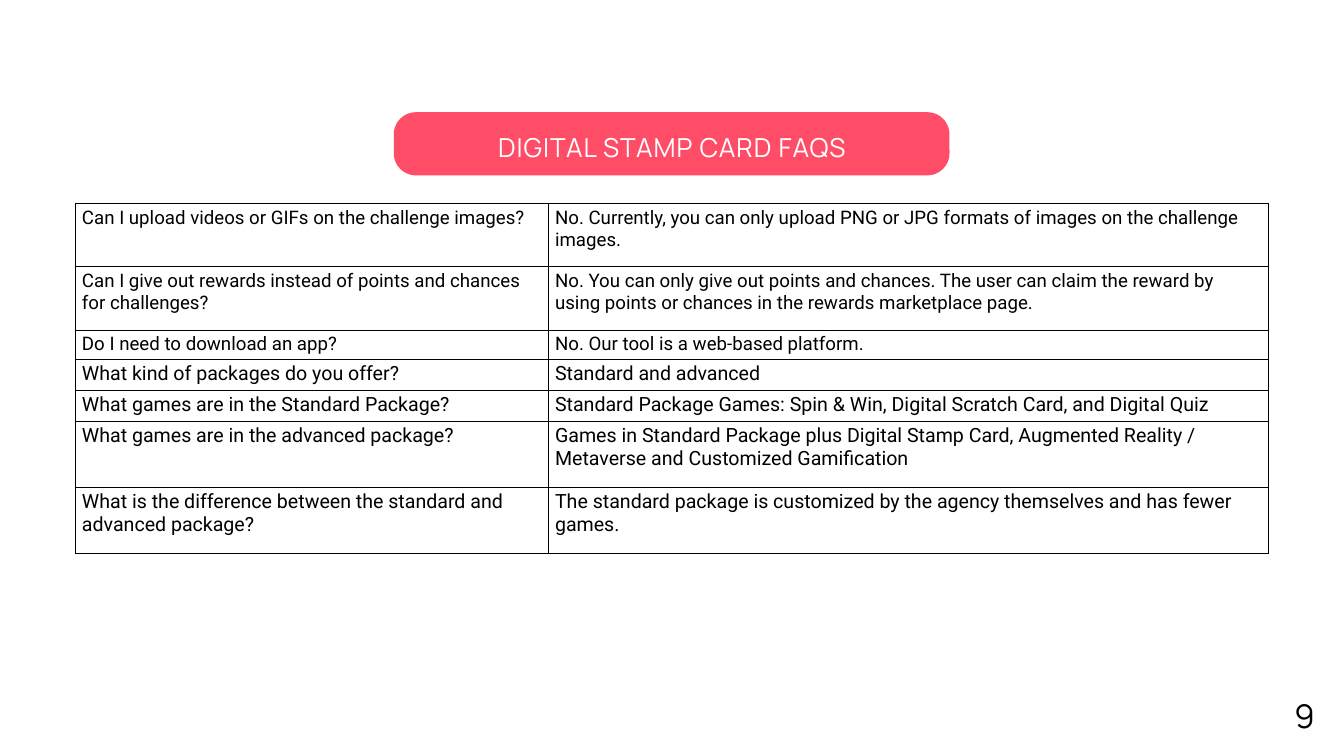
from lxml.etree import SubElement
from pptx import Presentation
from pptx.dml.color import RGBColor
from pptx.enum.shapes import MSO_SHAPE as Shape
from pptx.enum.text import MSO_ANCHOR as Anchor, MSO_AUTO_SIZE as AutoSize, PP_ALIGN as Align
from pptx.oxml.ns import qn
from pptx.util import Inches, Pt

BLACK = RGBColor(0x00, 0x00, 0x00)
WHITE = RGBColor(0xFF, 0xFF, 0xFF)
CORAL = RGBColor(0xFF, 0x4D, 0x67)

COLUMN_WIDTHS = (7.04, 10.72)
FAQS = [
    (0.94, 20, "Can I upload videos or GIFs on the challenge images?",
     "No. Currently, you can only upload PNG or JPG formats of images on the challenge images."),
    (0.94, 20, "Can I give out rewards instead of points and chances for challenges?",
     "No. You can only give out points and chances. The user can claim the reward by using "
     "points or chances in the rewards marketplace page."),
    (0.44, 20, "Do I need to download an app?",
     "No. Our tool is a web-based platform."),
    (0.46, 21, "What kind of packages do you offer?",
     "Standard and advanced"),
    (0.46, 21, "What games are in the Standard Package?",
     "Standard Package Games: Spin & Win, Digital Scratch Card, and Digital Quiz"),
    (0.98, 21, "What games are in the advanced package?",
     "Games in Standard Package plus Digital Stamp Card, Augmented Reality / Metaverse and "
     "Customized Gamification"),
    (0.98, 21, "What is the difference between the standard and advanced package?",
     "The standard package is customized by the agency themselves and has fewer games."),
]


class SlideBuilder:
    heading_font = "Manrope"
    body_font = "Roboto"
    border_width = Pt(0.75)

    def __init__(self, slide):
        self.slide = slide

    def run(self, p, text, font, size, color):
        r = p.add_run()
        r.text = text
        r.font.name = font
        r.font.size = Pt(size)
        r.font.color.rgb = color
        return r

    def banner(self, left, top, width, height, radius):
        sp = self.slide.shapes.add_shape(Shape.ROUNDED_RECTANGLE, Inches(left), Inches(top),
                                         Inches(width), Inches(height))
        sp.adjustments[0] = radius / height
        sp.shadow.inherit = False
        sp.fill.solid()
        sp.fill.fore_color.rgb = CORAL
        sp.line.fill.background()

    def text(self, left, top, width, height, text, size, color, leading, inset=0,
             anchor=Anchor.TOP, align=Align.LEFT, spacing=0, fit=AutoSize.NONE):
        box = self.slide.shapes.add_textbox(Inches(left), Inches(top),
                                            Inches(width), Inches(height))
        tf = box.text_frame
        tf.word_wrap = True
        tf.auto_size = fit
        tf.vertical_anchor = anchor
        tf.margin_left = tf.margin_right = tf.margin_top = tf.margin_bottom = Inches(inset)
        p = tf.paragraphs[0]
        p.alignment = align
        p.line_spacing = Pt(leading)
        r = self.run(p, text, self.heading_font, size, color)
        if spacing:
            r.font._element.set("spc", str(round(spacing * 100)))

    def border(self, cell):
        tc_pr = cell._tc.get_or_add_tcPr()
        for side in ("lnL", "lnR", "lnT", "lnB"):
            line = SubElement(tc_pr, qn(f"a:{side}"), w=str(self.border_width))
            fill = SubElement(line, qn("a:solidFill"))
            SubElement(fill, qn("a:srgbClr"), val=str(BLACK))

    def faq_table(self, left, top, widths, faqs):
        height = sum(faq[0] for faq in faqs)
        frame = self.slide.shapes.add_table(len(faqs), len(widths), Inches(left), Inches(top),
                                            Inches(sum(widths)), Inches(height))
        table = frame.table
        table.first_row = table.horz_banding = False
        for column, width in zip(table.columns, widths):
            column.width = Inches(width)
        for row, (row_height, size, *texts) in zip(table.rows, faqs):
            row.height = Inches(row_height)
            for cell, text in zip(row.cells, texts):
                self.border(cell)
                cell.fill.background()
                self.run(cell.text_frame.paragraphs[0], text, self.body_font, size, BLACK)


def main():
    prs = Presentation()
    prs.slide_width, prs.slide_height = Inches(20), Inches(11.25)
    s = SlideBuilder(prs.slides.add_slide(prs.slide_layouts[6]))
    s.faq_table(1.12, 3.03, COLUMN_WIDTHS, FAQS)
    s.banner(5.86, 1.67, 8.27, 0.94, 0.33)
    s.text(6.32, 0.63, 7.36, 3.05, "DIGITAL STAMP CARD FAQS", 28, WHITE, 39.2, inset=0.06,
           anchor=Anchor.MIDDLE, align=Align.CENTER, spacing=1.1)
    s.text(19.26, 10.02, 0.31, 0.87, "9", 35, BLACK, 66.5, fit=AutoSize.SHAPE_TO_FIT_TEXT)
    prs.save("out.pptx")


if __name__ == "__main__":
    main()
